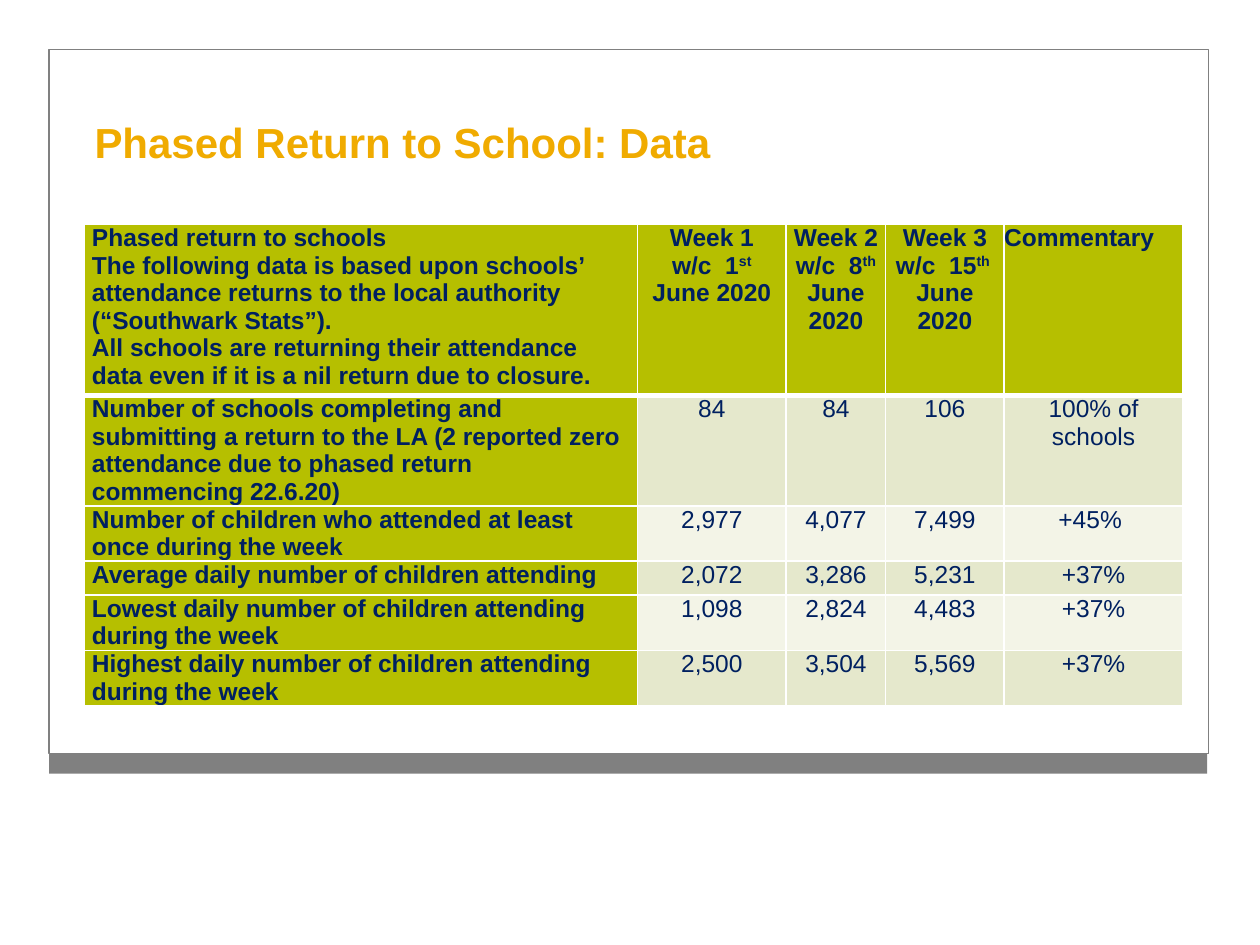
from lxml.etree import SubElement
from pptx import Presentation
from pptx.dml.color import RGBColor
from pptx.enum.shapes import MSO_SHAPE
from pptx.enum.text import MSO_ANCHOR, PP_ALIGN
from pptx.oxml.ns import qn
from pptx.util import Inches, Pt

GREY = RGBColor(0x80, 0x80, 0x80)
AMBER = RGBColor(0xF0, 0xAB, 0x00)
NAVY = RGBColor(0x00, 0x20, 0x60)
LIME = RGBColor(0xB6, 0xBF, 0x00)
BANDS = [RGBColor(0xF3, 0xF4, 0xE7), RGBColor(0xE5, 0xE8, 0xCC)]
FONT = "Arial"

COL_WIDTHS = [4.39, 1.18, 0.79, 0.94, 1.42]
ROW_HEIGHTS = [1.36, 0.87, 0.44, 0.27, 0.44, 0.44]
HEADERS = [
    ["Phased return to schools",
     "The following data is based upon schools’ attendance returns to the local "
     "authority (“Southwark Stats”).",
     "All schools are returning their attendance data even if it is a nil return "
     "due to closure."],
    ["Week 1", "w/c  1^st^ June 2020"],
    ["Week 2", "w/c  8^th^ June 2020"],
    ["Week 3", "w/c  15^th ^", "June 2020"],
    ["Commentary"],
]
ROWS = [
    ("Number of schools completing and submitting a return to the LA (2 reported zero "
     "attendance due to phased return commencing 22.6.20)",
     "84", "84", "106", "100% of schools"),
    ("Number of children who attended at least once during the week",
     "2,977", "4,077", "7,499", "+45% "),
    ("Average daily number of children attending", "2,072", "3,286", "5,231", "+37%"),
    ("Lowest daily number of children attending during the week",
     "1,098", "2,824", "4,483", "+37%"),
    ("Highest daily number of children attending during the week",
     "2,500", "3,504", "5,569", "+37%"),
]


def add_run(p, text, size, color, bold):
    """Add one formatted run to a paragraph."""
    r = p.add_run()
    r.text = text
    r.font.name, r.font.size, r.font.bold = FONT, Pt(size), bold
    r.font.color.rgb = color
    return r


def add_rect(s, x, y, w, h, fill=None, line=None):
    """Add a rectangle of the slide frame."""
    sp = s.shapes.add_shape(MSO_SHAPE.RECTANGLE, Inches(x), Inches(y), Inches(w), Inches(h))
    sp.shadow.inherit = False
    if fill is None:
        sp.fill.background()
    else:
        sp.fill.solid()
        sp.fill.fore_color.rgb = fill
    if line is None:
        sp.line.fill.background()
    else:
        sp.line.color.rgb = line
        sp.line.width = Pt(0.75)


def set_title(s, text):
    """Place and format the title placeholder."""
    sp = s.shapes.title
    sp.left, sp.top, sp.width, sp.height = Inches(0.75), Inches(0.41), Inches(7.17), Inches(0.99)
    tf = sp.text_frame
    tf.margin_left = tf.margin_top = tf.margin_right = tf.margin_bottom = 0
    tf.vertical_anchor = MSO_ANCHOR.TOP
    p = tf.paragraphs[0]
    p.alignment = PP_ALIGN.LEFT
    p.line_spacing = Pt(66)
    add_run(p, text, 24, AMBER, True)


def set_borders(cell, widths):
    """Draw white borders with a width in points for each side."""
    tc_pr = cell._tc.get_or_add_tcPr()
    for side, width in widths.items():
        ln = SubElement(tc_pr, qn(f"a:ln{side}"), w=str(Pt(width)))
        SubElement(SubElement(ln, qn("a:solidFill")), qn("a:srgbClr"), val="FFFFFF")


def fill_cell(cell, paragraphs, fill, align, bold, margin):
    """Fill a cell; text between carets is superscript."""
    cell.margin_left = cell.margin_right = Inches(margin)
    cell.margin_top = cell.margin_bottom = 0
    cell.fill.solid()
    cell.fill.fore_color.rgb = fill
    tf = cell.text_frame
    for i, text in enumerate(paragraphs):
        p = tf.add_paragraph() if i else tf.paragraphs[0]
        p.alignment = align
        for j, part in enumerate(text.split("^")):
            if part:
                r = add_run(p, part, 14, NAVY, bold)
                if j % 2:
                    r._r.get_or_add_rPr().set("baseline", "30000")


def add_attendance_table(s):
    """Add the attendance table with its header row and label column."""
    table = s.shapes.add_table(
        len(ROW_HEIGHTS), len(COL_WIDTHS), Inches(0.67), Inches(1.78),
        Inches(sum(COL_WIDTHS)), Inches(sum(ROW_HEIGHTS))).table
    for col, width in zip(table.columns, COL_WIDTHS):
        col.width = Inches(width)
    for row, height in zip(table.rows, ROW_HEIGHTS):
        row.height = Inches(height)
    grid = [HEADERS] + [[[text] for text in row] for row in ROWS]
    for i, row in enumerate(grid):
        for j, paragraphs in enumerate(row):
            heading = i == 0 or j == 0
            left = j == 0 or (i == 0 and j == len(row) - 1)
            cell = table.cell(i, j)
            set_borders(cell, {"L": 1, "R": 1, "T": 3 if i == 1 else 1, "B": 3 if i == 0 else 1})
            fill_cell(cell, paragraphs, LIME if heading else BANDS[i % 2],
                      PP_ALIGN.LEFT if left else PP_ALIGN.CENTER, heading,
                      0.06 if j < 3 else 0)


def main():
    """Build the slide and save it."""
    prs = Presentation()
    prs.slide_width, prs.slide_height = Inches(10), Inches(7.5)
    s = prs.slides.add_slide(prs.slide_layouts[5])
    add_rect(s, 0.39, 5.98, 9.19, 0.16, fill=GREY)
    add_rect(s, 0.39, 0.39, 9.2, 5.59, line=GREY)
    set_title(s, "Phased Return to School: Data")
    add_attendance_table(s)
    prs.save("out.pptx")


if __name__ == "__main__":
    main()
